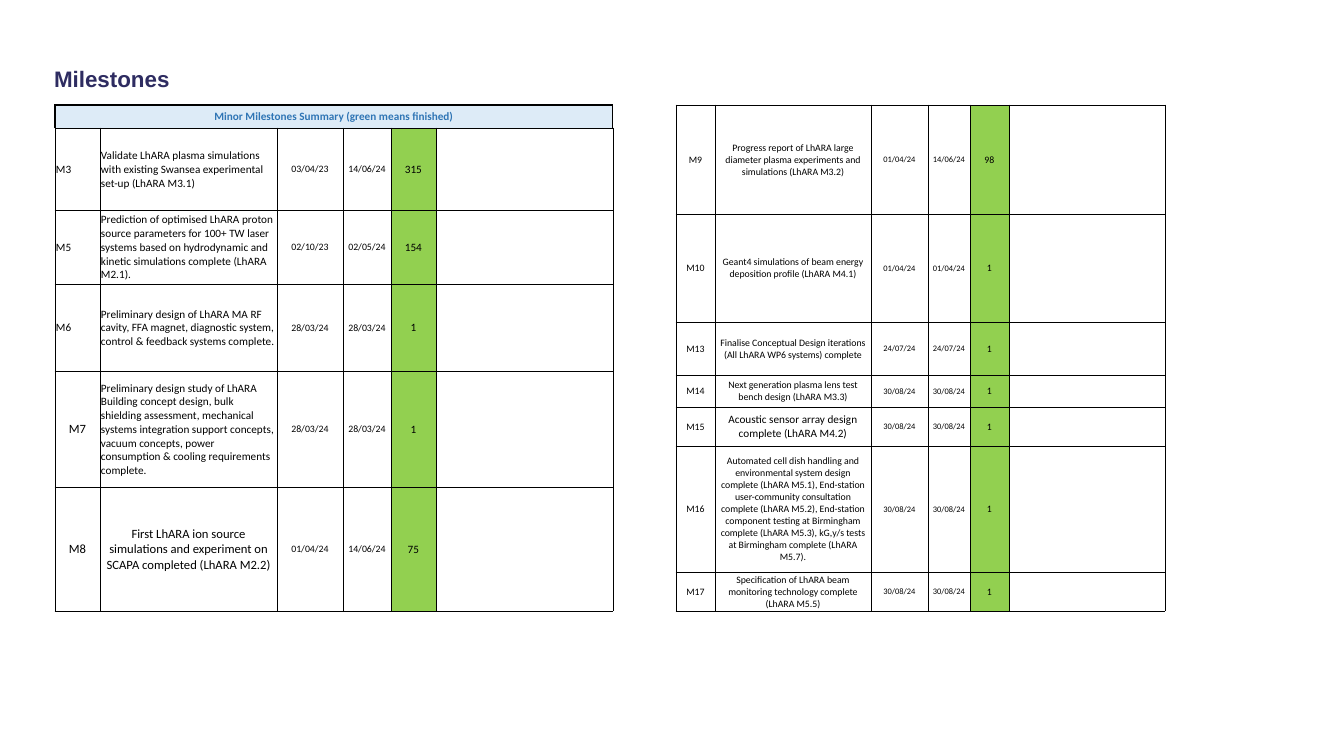
from dataclasses import dataclass

from lxml.etree import SubElement
from pptx import Presentation
from pptx.dml.color import RGBColor
from pptx.enum.text import MSO_ANCHOR, PP_ALIGN
from pptx.oxml.ns import qn
from pptx.util import Emu, Pt


@dataclass(frozen=True)
class Theme:
    title: str = "2E2C61"
    header: str = "2F75B5"
    header_fill: str = "DDEBF7"
    done: str = "92D050"
    white: str = "FFFFFF"
    black: str = "000000"
    title_size: int = 16
    label: int = 9
    body: int = 8
    small: int = 7
    tiny: int = 6
    head_font: str = "Arial"
    body_font: str = "Calibri"


THEME = Theme()
LEFT, CENTER = PP_ALIGN.LEFT, PP_ALIGN.CENTER
HEADER = "Minor Milestones Summary (green means finished)"

# Id, id size, id align, description, its size, its align, planned, actual, days
EARLY = [
    ("M3", THEME.body, LEFT, "Validate LhARA plasma simulations with existing Swansea "
     "experimental set-up (LhARA M3.1)", THEME.body, LEFT, "03/04/23", "14/06/24", "315"),
    ("M5", THEME.body, LEFT, "Prediction of optimised LhARA proton source parameters for "
     "100+ TW laser systems based on hydrodynamic and kinetic simulations complete "
     "(LhARA M2.1).", THEME.body, LEFT, "02/10/23", "02/05/24", "154"),
    ("M6", THEME.body, LEFT, "Preliminary design of LhARA MA RF cavity, FFA magnet, "
     "diagnostic system, control & feedback systems complete.",
     THEME.body, LEFT, "28/03/24", "28/03/24", "1"),
    ("M7", THEME.label, CENTER, "Preliminary design study of LhARA Building concept design, "
     "bulk shielding assessment, mechanical systems integration support concepts, vacuum "
     "concepts, power consumption & cooling requirements complete.",
     THEME.body, LEFT, "28/03/24", "28/03/24", "1"),
    ("M8", THEME.label, CENTER, "First LhARA ion source simulations and experiment on SCAPA "
     "completed (LhARA M2.2)", THEME.label, CENTER, "01/04/24", "14/06/24", "75"),
]

# Id, description, description size, planned, actual, days
LATE = [
    ("M9", "Progress report of LhARA large diameter plasma experiments and simulations "
     "(LhARA M3.2)", THEME.small, "01/04/24", "14/06/24", "98"),
    ("M10", "Geant4 simulations of beam energy deposition profile (LhARA M4.1)",
     THEME.small, "01/04/24", "01/04/24", "1"),
    ("M13", "Finalise Conceptual Design iterations (All LhARA WP6 systems) complete",
     THEME.small, "24/07/24", "24/07/24", "1"),
    ("M14", "Next generation plasma lens test bench design (LhARA M3.3)",
     THEME.small, "30/08/24", "30/08/24", "1"),
    ("M15", "Acoustic sensor array design complete (LhARA M4.2)",
     THEME.body, "30/08/24", "30/08/24", "1"),
    ("M16", "Automated cell dish handling and environmental system design complete "
     "(LhARA M5.1), End-station user-community consultation complete (LhARA M5.2), "
     "End-station component testing at Birmingham complete (LhARA M5.3), kG,y/s tests "
     "at Birmingham complete (LhARA M5.7).", THEME.small, "30/08/24", "30/08/24", "1"),
    ("M17", "Specification of LhARA beam monitoring technology complete (LhARA M5.5)",
     THEME.small, "30/08/24", "30/08/24", "1"),
]


def px(n):
    return Emu(round(n * 914400 / 100.8))


def write(tf, text, size=THEME.body, color=THEME.black, font=THEME.body_font,
          bold=False, align=CENTER, spacing=None):
    p = tf.paragraphs[0]
    p.alignment = align
    if spacing:
        p.line_spacing = spacing
    r = p.add_run()
    r.text = text
    r.font.name, r.font.size, r.font.bold = font, Pt(size), bold
    r.font.color.rgb = RGBColor.from_string(color)


def set_borders(cell, widths):
    tc_pr = cell._tc.get_or_add_tcPr()
    for side, width in zip(("lnL", "lnR", "lnT", "lnB"), widths):
        ln = SubElement(tc_pr, qn(f"a:{side}"), w=str(Pt(width)))
        fill = SubElement(ln, qn("a:solidFill"))
        SubElement(fill, qn("a:srgbClr"), val=THEME.black)


def format_cell(cell, text="", fill=None, borders=(0.5,) * 4, **fmt):
    cell.margin_left = cell.margin_right = cell.margin_top = px(1)
    cell.margin_bottom = 0
    cell.vertical_anchor = MSO_ANCHOR.MIDDLE
    set_borders(cell, borders)
    if fill:
        cell.fill.solid()
        cell.fill.fore_color.rgb = RGBColor.from_string(fill)
    else:
        cell.fill.background()
    if text:
        write(cell.text_frame, text, **fmt)
    else:
        # Small type keeps an empty cell from stretching its row
        SubElement(cell.text_frame.paragraphs[0]._p, qn("a:endParaRPr"),
                   sz=str(THEME.tiny * 100))


def add_grid(slide, left, top, widths, heights):
    table = slide.shapes.add_table(len(heights), len(widths), px(left), px(top),
                                   px(sum(widths)), px(sum(heights))).table
    table.first_row = table.horz_banding = False
    for column, width in zip(table.columns, widths):
        column.width = px(width)
    for row, height in zip(table.rows, heights):
        row.height = px(height)
    return table


def fill_row(table, i, name, name_fmt, text, text_fmt, dates, date_size, days, days_size):
    format_cell(table.cell(i, 0), name, **name_fmt)
    format_cell(table.cell(i, 1), text, **text_fmt)
    for j, date in enumerate(dates, 2):
        format_cell(table.cell(i, j), date, size=date_size)
    format_cell(table.cell(i, 4), days, fill=THEME.done, size=days_size)
    format_cell(table.cell(i, 5))


def add_title(slide, text):
    sp = slide.shapes.title
    sp.left, sp.top, sp.width, sp.height = px(44), px(38), px(1288), px(85)
    sp.text_frame.vertical_anchor = MSO_ANCHOR.MIDDLE
    write(sp.text_frame, text, size=THEME.title_size, color=THEME.title,
          font=THEME.head_font, bold=True, align=LEFT, spacing=0.9)


def add_early_table(slide):
    table = add_grid(slide, 55, 105, [45, 177, 66, 48, 45, 177],
                     [23, 82, 74, 87, 116, 124])
    for j in range(6):
        format_cell(table.cell(0, j), "" if j else HEADER, fill=THEME.header_fill,
                    borders=(1, 1, 1, 0.5), color=THEME.header, bold=True)
    table.cell(0, 0).merge(table.cell(0, 5))
    for i, (name, n_size, n_align, text, size, align, *dates, days) in enumerate(EARLY, 1):
        fill_row(table, i, name, dict(size=n_size, align=n_align),
                 text, dict(size=size, align=align),
                 dates, THEME.small, days, THEME.body)


def add_late_table(slide):
    table = add_grid(slide, 676, 105, [39, 156, 57, 42, 39, 156],
                     [109, 108, 53, 32, 39, 126, 39])
    for i, (name, text, size, *dates, days) in enumerate(LATE):
        fill_row(table, i, name, dict(size=THEME.small, fill=THEME.white),
                 text, dict(size=size), dates, THEME.tiny, days, THEME.small)


def main():
    prs = Presentation()
    prs.slide_width, prs.slide_height = px(1344), px(756)
    slide = prs.slides.add_slide(prs.slide_layouts[5])
    add_title(slide, "Milestones")
    add_early_table(slide)
    add_late_table(slide)
    prs.save("out.pptx")


if __name__ == "__main__":
    main()
